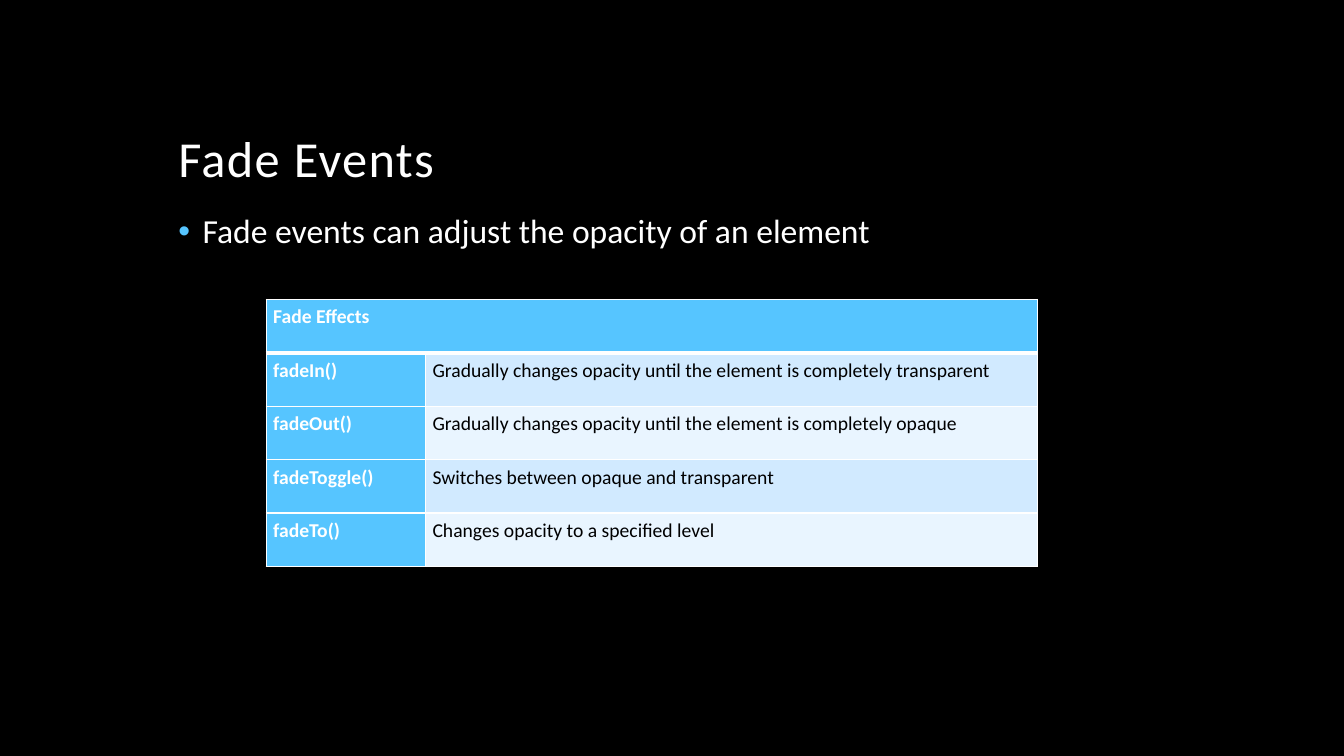
"""Builds the Fade Events slide with its table of fade effects."""
from lxml import etree
from pptx import Presentation
from pptx.dml.color import RGBColor
from pptx.enum.text import MSO_ANCHOR, PP_ALIGN
from pptx.oxml.ns import qn
from pptx.util import Inches, Pt

TITLE = "Fade Events"
BULLET = "Fade events can adjust the opacity of an element"
TABLE_HEADING = "Fade Effects"
EFFECTS = [
    ("fadeIn()", "Gradually changes opacity until the element is completely transparent"),
    ("fadeOut()", "Gradually changes opacity until the element is completely opaque"),
    ("fadeToggle()", "Switches between opaque and transparent"),
    ("fadeTo()", "Changes opacity to a specified level"),
]
COLORS = {
    "background": "000000",
    "light": "FFFFFF",
    "dark": "000000",
    "accent": "56C5FF",
    "odd_band": "D1EAFF",
    "even_band": "E9F5FF",
}
FONT = "Calibri"
COLUMN_WIDTHS = (1.58, 6.07)
ROW_HEIGHT = 0.53
JUSTIFY = PP_ALIGN.JUSTIFY
TOP, BOTTOM = MSO_ANCHOR.TOP, MSO_ANCHOR.BOTTOM


def style_runs(paragraph, size, color, bold=False):
    for run in paragraph.runs:
        run.font.name = FONT
        run.font.size = Pt(size)
        run.font.bold = bold
        run.font.color.rgb = RGBColor.from_string(color)


def add_text(slide, text, size, box, anchor):
    shape = slide.shapes.add_textbox(*map(Inches, box))
    frame = shape.text_frame
    frame.word_wrap = True
    frame.vertical_anchor = anchor
    frame.text = text
    paragraph = frame.paragraphs[0]
    paragraph.line_spacing = 0.9
    style_runs(paragraph, size, COLORS["light"])
    return paragraph


def add_bullet(paragraph, indent):
    properties = paragraph._p.get_or_add_pPr()
    properties.set("marL", str(Inches(indent)))
    properties.set("indent", str(-Inches(indent)))
    color = etree.SubElement(properties, qn("a:buClr"))
    etree.SubElement(color, qn("a:srgbClr"), val=COLORS["accent"])
    etree.SubElement(properties, qn("a:buFont"), typeface="Arial")
    etree.SubElement(properties, qn("a:buChar"), char="•")


def style_cell(cell, fill, top_width=1, bottom_width=1):
    properties = cell._tc.get_or_add_tcPr()
    widths = {"a:lnL": 1, "a:lnR": 1, "a:lnT": top_width, "a:lnB": bottom_width}
    for side, width in widths.items():
        line = etree.SubElement(properties, qn(side), w=str(Pt(width)))
        solid = etree.SubElement(line, qn("a:solidFill"))
        etree.SubElement(solid, qn("a:srgbClr"), val=COLORS["light"])
    cell.fill.solid()
    cell.fill.fore_color.rgb = RGBColor.from_string(fill)
    cell.margin_left = cell.margin_right = Inches(0.07)
    cell.margin_top = cell.margin_bottom = 0


def write_cell(cell, text, color, bold):
    cell.text_frame.text = text
    paragraph = cell.text_frame.paragraphs[0]
    paragraph.alignment = JUSTIFY
    paragraph.line_spacing = 1.25
    style_runs(paragraph, 14, color, bold)


def add_effects_table(slide):
    row_count = len(EFFECTS) + 1
    box = (2.64, 2.97, sum(COLUMN_WIDTHS), ROW_HEIGHT * row_count)
    table = slide.shapes.add_table(row_count, 2, *map(Inches, box)).table
    for column, width in zip(table.columns, COLUMN_WIDTHS):
        column.width = Inches(width)
    for row in table.rows:
        row.height = Inches(ROW_HEIGHT)

    heading = table.cell(0, 0)
    heading.merge(table.cell(0, 1))
    for cell in table.rows[0].cells:
        style_cell(cell, COLORS["accent"], bottom_width=3)
    write_cell(heading, TABLE_HEADING, COLORS["light"], True)

    for row, (name, description) in enumerate(EFFECTS, start=1):
        band = COLORS["odd_band" if row % 2 else "even_band"]
        name_cell, description_cell = table.cell(row, 0), table.cell(row, 1)
        top_width = 3 if row == 1 else 1
        style_cell(name_cell, COLORS["accent"], top_width)
        style_cell(description_cell, band, top_width)
        write_cell(name_cell, name, COLORS["light"], True)
        write_cell(description_cell, description, COLORS["dark"], False)


def main():
    presentation = Presentation()
    presentation.slide_width = Inches(13.33)
    presentation.slide_height = Inches(7.5)
    slide = presentation.slides.add_slide(presentation.slide_layouts[6])
    slide.background.fill.solid()
    slide.background.fill.fore_color.rgb = RGBColor.from_string(COLORS["background"])

    title = add_text(slide, TITLE, 36, (1.67, 0.42, 10, 1.5), BOTTOM)
    title.runs[0].font._element.set("spc", "100")
    bullet = add_text(slide, BULLET, 24, (1.67, 2.08, 9.99, 4.5), TOP)
    add_bullet(bullet, 0.24)
    add_effects_table(slide)
    presentation.save("out.pptx")


if __name__ == "__main__":
    main()
